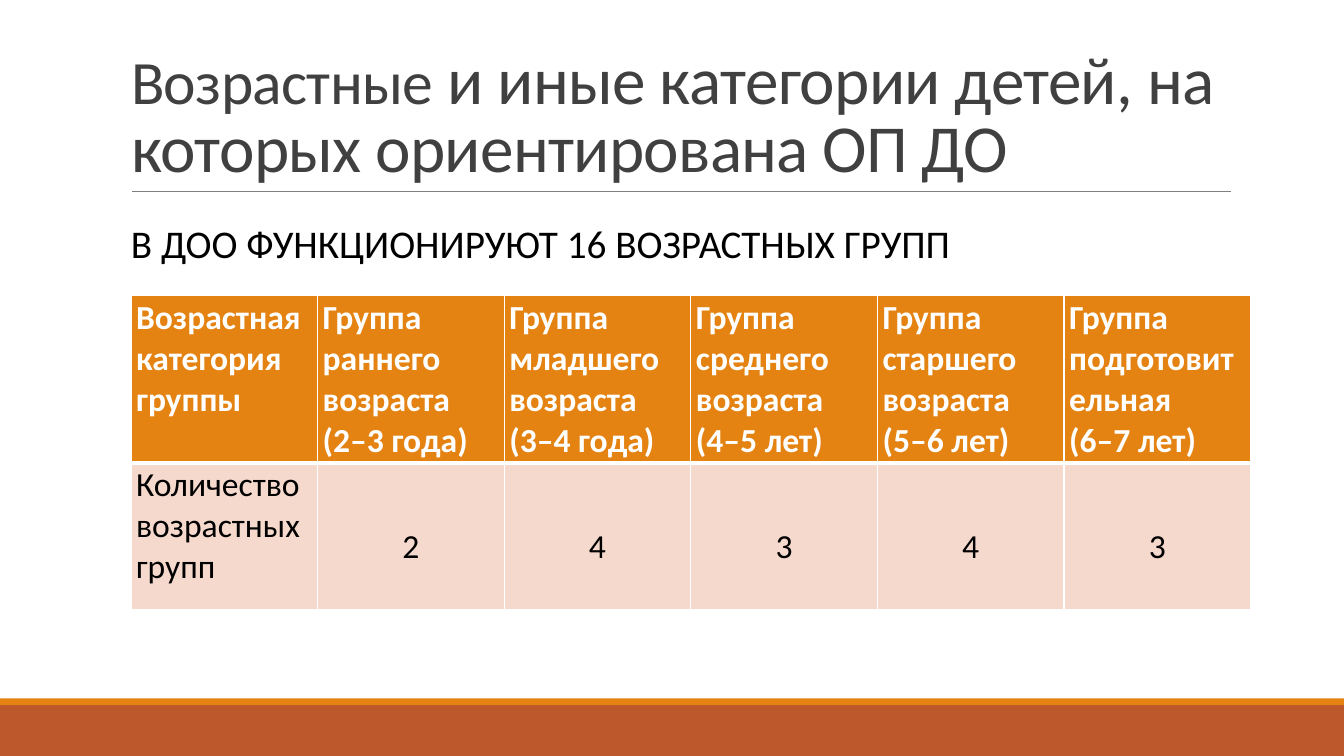
from lxml.etree import SubElement
from pptx import Presentation
from pptx.dml.color import RGBColor
from pptx.enum.shapes import MSO_CONNECTOR, MSO_SHAPE
from pptx.enum.text import MSO_ANCHOR, MSO_AUTO_SIZE, PP_ALIGN
from pptx.oxml import parse_xml
from pptx.oxml.ns import nsdecls, qn
from pptx.util import Cm, Pt

WHITE = RGBColor(0xFF, 0xFF, 0xFF)
BLACK = RGBColor(0, 0, 0)
DARK = RGBColor(0x40, 0x40, 0x40)
GRAY = RGBColor(0x80, 0x80, 0x80)
ORANGE = RGBColor(0xE4, 0x83, 0x12)
RUST = RGBColor(0xBD, 0x58, 0x2C)
PEACH = RGBColor(0xF5, 0xD9, 0xCC)
FONT = "Calibri"
WIDTH, HEIGHT = 33.87, 19.05

HEADS = [
    "Возрастная категория группы",
    "Группа раннего возраста\n(2–3 года)",
    "Группа младшего возраста\n(3–4 года)",
    "Группа среднего возраста (4–5 лет)",
    "Группа старшего возраста\n(5–6 лет)",
    "Группа подготовительная\n(6–7 лет)",
]
COUNTS = ["Количество возрастных групп", "2", "4", "3", "4", "3"]


def style(font, size, color, bold=False):
    font.name, font.size, font.bold = FONT, Pt(size), bold
    font.color.rgb = color


def add_bar(slide, left, top, width, height, color):
    bar = slide.shapes.add_shape(
        MSO_SHAPE.RECTANGLE, Cm(left), Cm(top), Cm(width), Cm(height))
    bar.shadow.inherit = False
    bar.fill.solid()
    bar.fill.fore_color.rgb = color
    bar.line.fill.background()


def add_footer(slide, left, top, width, height):
    strip = 0.17
    add_bar(slide, left, top + strip, width, height - strip, RUST)
    add_bar(slide, left, top, width, strip, ORANGE)


def add_title(slide, left, top, width, height):
    title = slide.shapes.title
    title.left, title.top = Cm(left), Cm(top)
    title.width, title.height = Cm(width), Cm(height)
    frame = title.text_frame
    frame.word_wrap = True
    frame.auto_size = MSO_AUTO_SIZE.NONE
    frame.vertical_anchor = MSO_ANCHOR.BOTTOM
    par = frame.paragraphs[0]
    par.alignment = PP_ALIGN.LEFT
    par.line_spacing = 0.85
    for text, size in [
        ("Возрастные", 44),
        (" и иные категории детей, на которых ориентирована ОП ДО", 48),
    ]:
        run = par.add_run()
        run.text = text
        style(run.font, size, DARK)
        run.font._element.set("spc", "-50")

    # Rule under the title
    base = Cm(top + height)
    rule = slide.shapes.add_connector(
        MSO_CONNECTOR.STRAIGHT, Cm(left + 0.28), base, Cm(left + 27.96), base)
    rule.line.color.rgb = GRAY
    rule.line.width = Pt(0.5)
    SubElement(rule._element.spPr, qn("a:effectLst"))


def add_lead(slide, left, top, width, height):
    box = slide.shapes.add_textbox(Cm(left), Cm(top), Cm(width), Cm(height))
    frame = box.text_frame
    frame.word_wrap = True
    frame.vertical_anchor = MSO_ANCHOR.MIDDLE
    par = frame.paragraphs[0]
    par.text = "В ДОО ФУНКЦИОНИРУЮТ 16 ВОЗРАСТНЫХ ГРУПП"
    par.line_spacing = 0.9
    par.space_before, par.space_after = Pt(12), Pt(2)
    style(par.font, 28, BLACK)


def set_edges(cell, base):
    props = cell._tc.get_or_add_tcPr()
    for i, (side, points) in enumerate(
            [("L", 1), ("R", 1), ("T", 1), ("B", base)]):
        props.insert(i, parse_xml(
            f'<a:ln{side} {nsdecls("a")} w="{Pt(points)}"><a:solidFill>'
            f'<a:srgbClr val="{WHITE}"/></a:solidFill></a:ln{side}>'))


def fill_cell(cell, text, head, count):
    cell.margin_left = cell.margin_right = Cm(0.13)
    cell.margin_top = cell.margin_bottom = Cm(0.05)
    cell.fill.solid()
    cell.fill.fore_color.rgb = ORANGE if head else PEACH
    set_edges(cell, 3 if head else 1)
    cell.text_frame.text = text
    for par in cell.text_frame.paragraphs:
        style(par.font, 24, WHITE if head else BLACK, head)
        if count:
            par.alignment = PP_ALIGN.CENTER
            par.line_spacing = 2.5


def add_groups(slide, left, top, width, heights):
    table = slide.shapes.add_table(
        2, len(HEADS), Cm(left), Cm(top), Cm(width), Cm(sum(heights))).table
    for col in table.columns:
        col.width = Cm(width / len(HEADS))
    for r, texts in enumerate([HEADS, COUNTS]):
        table.rows[r].height = Cm(heights[r])
        for c, text in enumerate(texts):
            fill_cell(table.cell(r, c), text, r == 0, r > 0 and c > 0)


def main():
    deck = Presentation()
    deck.slide_width, deck.slide_height = Cm(WIDTH), Cm(HEIGHT)
    slide = deck.slides.add_slide(deck.slide_layouts[5])
    add_footer(slide, 0, 17.6, WIDTH, HEIGHT - 17.6)
    add_title(slide, 3.05, 0.79, 27.94, 4.04)
    add_lead(slide, 3.05, 5.46, 23.24, 1.47)
    add_groups(slide, 3.3, 7.44, 28.22, [4.22, 3.71])
    deck.save("out.pptx")


if __name__ == "__main__":
    main()
